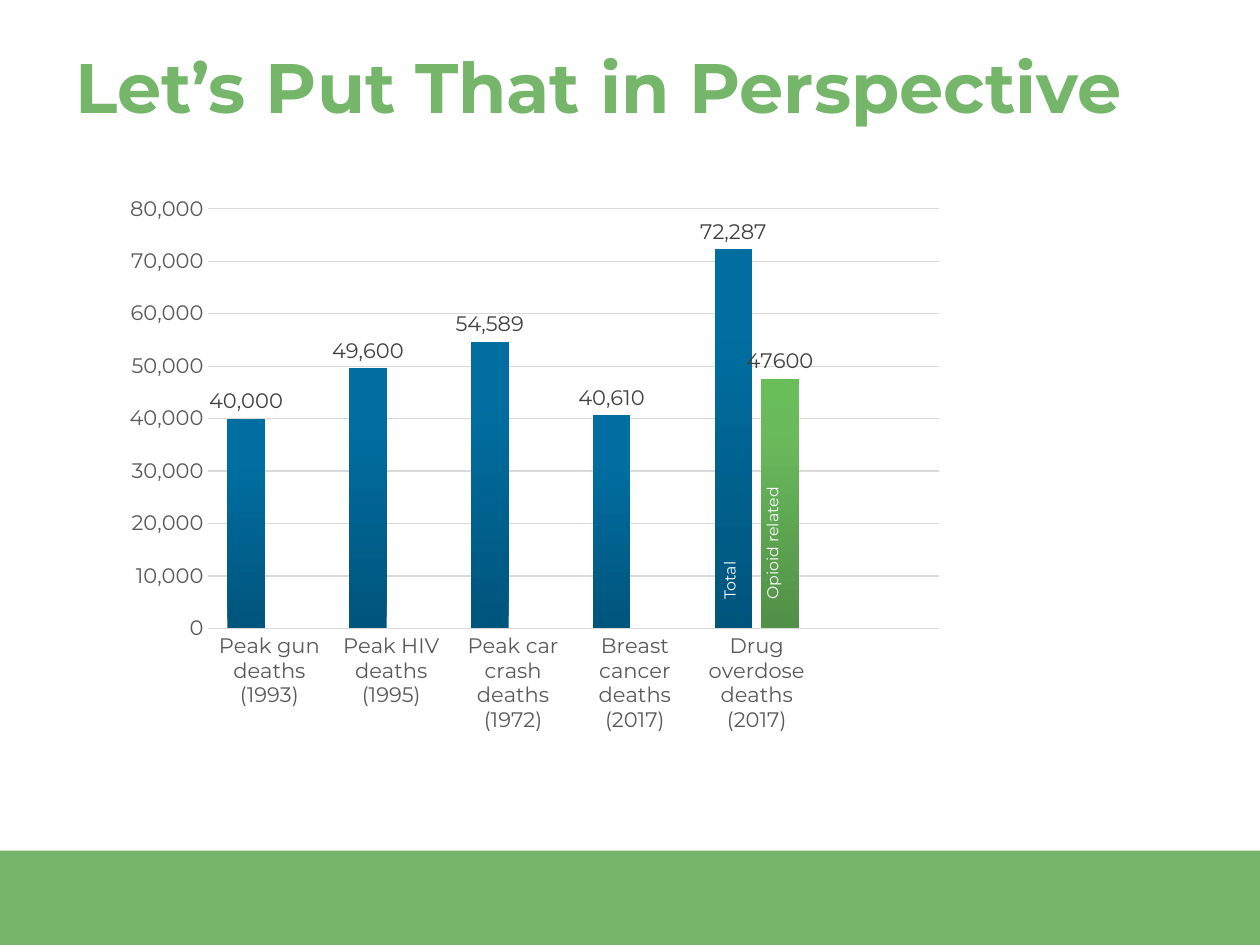
from lxml import etree
from pptx import Presentation
from pptx.chart.data import CategoryChartData
from pptx.dml.color import RGBColor
from pptx.enum.chart import XL_CHART_TYPE, XL_LABEL_POSITION, XL_TICK_MARK
from pptx.enum.shapes import MSO_SHAPE
from pptx.enum.text import MSO_ANCHOR, MSO_AUTO_SIZE
from pptx.oxml import parse_xml
from pptx.oxml.ns import nsdecls, qn
from pptx.util import Cm, Pt

COLUMN_CLUSTERED = XL_CHART_TYPE.COLUMN_CLUSTERED
OUTSIDE_END = XL_LABEL_POSITION.OUTSIDE_END
NO_TICK = XL_TICK_MARK.NONE
RECTANGLE = MSO_SHAPE.RECTANGLE
TOP = MSO_ANCHOR.TOP
GROW = MSO_AUTO_SIZE.SHAPE_TO_FIT_TEXT

FONT = "Montserrat"
THOUSANDS = "#,##0"
COLORS = {
    "green": "75B66A",
    "white": "FFFFFF",
    "black": "000000",
    "axis": "595959",
    "grid": "D9D9D9",
    "label": "404040",
}
GRADIENTS = {
    "blue": [(0, "00557C"), (80, "006EA1"), (100, "006FA2")],
    "green": [(0, "519047"), (80, "6ABB5C"), (100, "69BE5A")],
}
CATEGORIES = [
    "Peak gun deaths (1993)",
    "Peak HIV deaths (1995)",
    "Peak car crash deaths (1972)",
    "Breast cancer deaths (2017)",
    "Drug overdose deaths (2017)",
    "",
]
SERIES = [
    ("Series 1", [40000, 49600, 54589, 40610, 72287, None], "blue", THOUSANDS),
    ("Series 2", [None, None, None, None, 47600, None], "green", "General"),
]
PLOT_LAYOUT = {"x": 0.11, "y": 0.04, "w": 0.87, "h": 0.75}


def color(name):
    """Return the named colour."""
    return RGBColor.from_string(COLORS[name])


def set_font(font, size, color_name, bold=False):
    """Apply the slide's typeface with a size and colour."""
    font.name = FONT
    font.size = Pt(size)
    font.bold = bold
    font.color.rgb = color(color_name)


def add_text(slide, box, text, size, color_name, bold=False, rotation=0):
    """Add a one-paragraph text box."""
    shape = slide.shapes.add_textbox(*map(Cm, box))
    shape.rotation = rotation
    frame = shape.text_frame
    frame.word_wrap = True
    frame.vertical_anchor = TOP
    if rotation:
        frame.auto_size = GROW
    paragraph = frame.paragraphs[0]
    paragraph.text = text
    set_font(paragraph.font, size, color_name, bold)


def add_footer_band(slide):
    """Add the green band along the bottom edge."""
    band = slide.shapes.add_shape(RECTANGLE, 0, Cm(17.15), Cm(25.4), Cm(1.93))
    band.shadow.inherit = False
    band.fill.solid()
    band.fill.fore_color.rgb = color("green")
    band.line.fill.background()


def fill_gradient(series, stops):
    """Fill a series with a gradient running from bottom to top."""
    stop_xml = "".join(
        f'<a:gs pos="{position * 1000}"><a:srgbClr val="{value}"/></a:gs>'
        for position, value in stops
    )
    gradient = parse_xml(
        f'<a:gradFill {nsdecls("a")} rotWithShape="1"><a:gsLst>{stop_xml}</a:gsLst>'
        '<a:lin ang="16200000" scaled="0"/></a:gradFill>'
    )
    series.format.line.fill.background()
    series._element.spPr.insert(0, gradient)


def style_series(series, gradient, number_format):
    """Set the fill and value labels of a series."""
    fill_gradient(series, GRADIENTS[gradient])
    labels = series.data_labels
    labels.show_value = True
    labels.position = OUTSIDE_END
    labels.number_format = number_format
    labels.number_format_is_linked = False
    set_font(labels.font, 12, "label")


def style_axes(chart):
    """Set the scale, lines and fonts of both axes."""
    for axis in (chart.category_axis, chart.value_axis):
        axis.major_tick_mark = NO_TICK
        axis.minor_tick_mark = NO_TICK
        set_font(axis.tick_labels.font, 12, "axis")
    category_line = chart.category_axis.format.line
    category_line.color.rgb = color("grid")
    category_line.width = Pt(1)
    value_axis = chart.value_axis
    value_axis.minimum_scale = 0
    value_axis.maximum_scale = 80000
    value_axis.major_unit = 10000
    value_axis.format.line.fill.background()
    value_axis.tick_labels.number_format = THOUSANDS
    value_axis.tick_labels.number_format_is_linked = False
    grid_line = value_axis.major_gridlines.format.line
    grid_line.color.rgb = color("grid")
    grid_line.width = Pt(0.75)


def place_plot(chart):
    """Fix the inner plot area within the chart."""
    plot_area = chart._chartSpace.chart.plotArea
    for layout in plot_area.findall(qn("c:layout")):
        plot_area.remove(layout)
    layout = etree.Element(qn("c:layout"))
    manual = etree.SubElement(layout, qn("c:manualLayout"))
    settings = {"layoutTarget": "inner", "xMode": "edge", "yMode": "edge", **PLOT_LAYOUT}
    for tag, value in settings.items():
        etree.SubElement(manual, qn(f"c:{tag}")).set("val", str(value))
    plot_area.insert(0, layout)


def add_deaths_chart(slide):
    """Add the column chart comparing causes of death."""
    data = CategoryChartData()
    data.categories = CATEGORIES
    for name, values, _, _ in SERIES:
        data.add_series(name, values)
    box = map(Cm, (2.34, 3.76, 16.94, 11.28))
    chart = slide.shapes.add_chart(COLUMN_CLUSTERED, *box, data).chart
    chart.has_legend = False
    chart.has_title = False
    set_font(chart.font, 10, "black")
    plot = chart.plots[0]
    plot.gap_width = 100
    plot.overlap = -24
    plot.vary_by_categories = False
    for series, (_, _, gradient, number_format) in zip(plot.series, SERIES):
        style_series(series, gradient, number_format)
    style_axes(chart)
    place_plot(chart)


def main():
    """Build and save the slide."""
    presentation = Presentation()
    presentation.slide_width = Cm(25.4)
    presentation.slide_height = Cm(19.05)
    slide = presentation.slides.add_slide(presentation.slide_layouts[6])
    add_footer_band(slide)
    add_text(slide, (1.27, 0.76, 22.86, 3.18), "Let’s Put That in Perspective", 40, "green", bold=True)
    add_deaths_chart(slide)
    add_text(slide, (13.92, 11.23, 1.57, 0.64), "Total", 9, "white", rotation=270)
    add_text(slide, (14.07, 10.52, 3, 0.64), "Opioid related", 9, "white", rotation=270)
    presentation.save("out.pptx")


if __name__ == "__main__":
    main()
